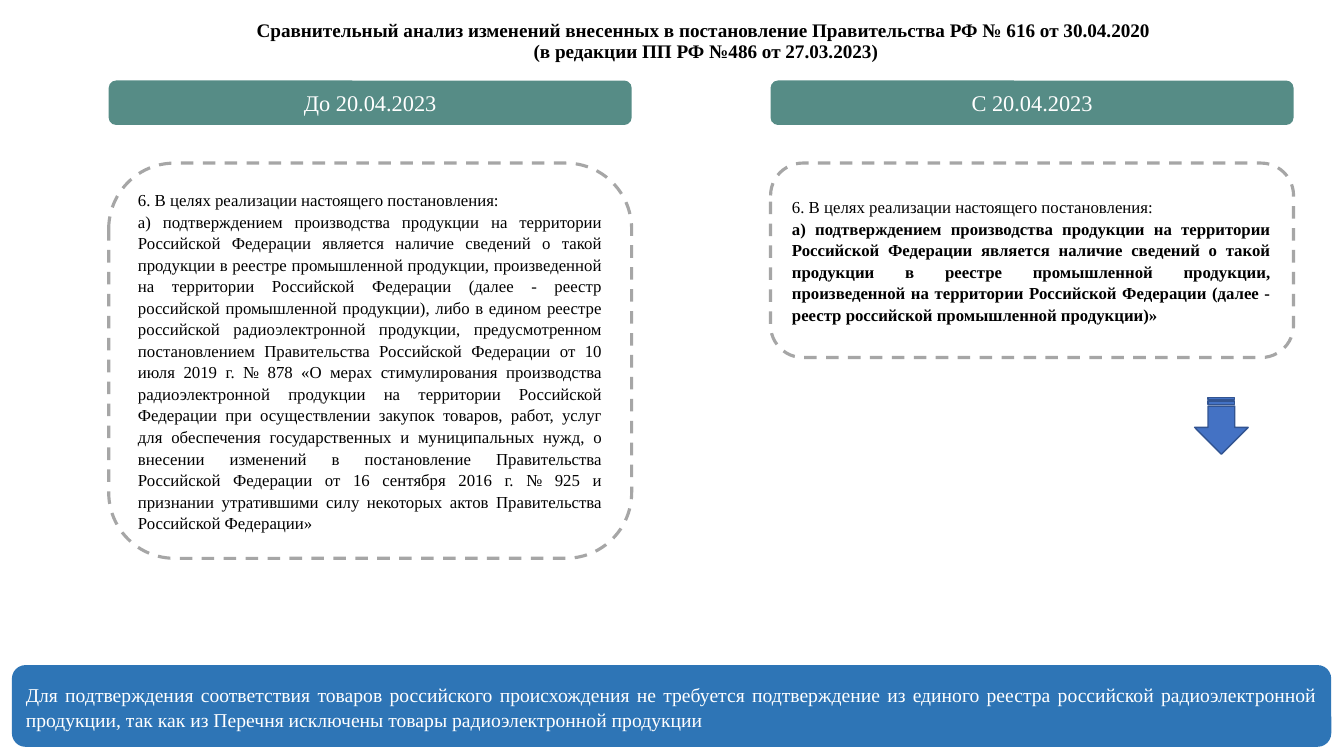
import dataclasses

import pptx
import pptx.dml.color
import pptx.enum.dml
import pptx.enum.shapes
import pptx.enum.text
import pptx.util

Cm = pptx.util.Cm
Pt = pptx.util.Pt
Align = pptx.enum.text.PP_ALIGN
Anchor = pptx.enum.text.MSO_ANCHOR
Preset = pptx.enum.shapes.MSO_SHAPE

FONT = "Times New Roman"
BLACK, WHITE = "000000", "FFFFFF"
GREEN, GREY = "568C86", "A6A6A6"
BLUE, ARROW_FILL, ARROW_LINE = "2E75B6", "4472C4", "325491"


@dataclasses.dataclass(frozen=True)
class Area:
    left: float
    top: float
    width: float
    height: float

    def lengths(self) -> tuple:
        return Cm(self.left), Cm(self.top), Cm(self.width), Cm(self.height)


@dataclasses.dataclass(frozen=True)
class Column:
    left: float
    heading: str
    panel_height: float


COLUMN_WIDTH = 13.18
INTRO = "6. В целях реализации настоящего постановления:"
CLAUSE = (
    "а) подтверждением производства продукции на территории Российской Федерации "
    "является наличие сведений о такой продукции в реестре промышленной продукции, "
    "произведенной на территории Российской Федерации (далее - реестр российской "
    "промышленной продукции)"
)
OLD_CLAUSE = CLAUSE + (
    ", либо в едином реестре российской радиоэлектронной продукции, предусмотренном "
    "постановлением Правительства Российской Федерации от 10 июля 2019 г. № 878 "
    "«О мерах стимулирования производства радиоэлектронной продукции на территории "
    "Российской Федерации при осуществлении закупок товаров, работ, услуг для "
    "обеспечения государственных и муниципальных нужд, о внесении изменений в "
    "постановление Правительства Российской Федерации от 16 сентября 2016 г. № 925 и "
    "признании утратившими силу некоторых актов Правительства Российской Федерации»"
)
NEW_CLAUSE = CLAUSE + "»"
CONCLUSION = (
    "Для подтверждения соответствия товаров российского происхождения не требуется "
    "подтверждение из единого реестра российской радиоэлектронной продукции, так как "
    "из Перечня исключены товары радиоэлектронной продукции"
)
TITLE = (
    "Сравнительный анализ изменений внесенных в постановление Правительства РФ "
    "№ 616 от 30.04.2020 ",
    "(в редакции ПП РФ №486 от 27.03.2023)",
)
COLUMNS = (
    Column(2.74, "До 20.04.2023", 9.96),
    Column(19.42, "С 20.04.2023", 4.9),
)


def colour(value: str) -> pptx.dml.color.RGBColor:
    return pptx.dml.color.RGBColor.from_string(value)


def write(box, *texts: str, size: float, ink: str = BLACK, align=Align.JUSTIFY,
          anchor=Anchor.MIDDLE, spacing: float = 1.07, bold: tuple = ()) -> None:
    frame = box.text_frame
    frame.word_wrap = True
    frame.auto_size = pptx.enum.text.MSO_AUTO_SIZE.NONE
    frame.vertical_anchor = anchor
    for index, text in enumerate(texts):
        para = frame.add_paragraph() if index else frame.paragraphs[0]
        para.alignment = align
        para.line_spacing = spacing
        para.space_before = para.space_after = Pt(0)
        span = para.add_run()
        span.text = text
        span.font.name = FONT
        span.font.size = Pt(size)
        span.font.bold = index in bold
        span.font.color.rgb = colour(ink)


def add_box(page, area: Area, preset=Preset.ROUNDED_RECTANGLE, fill: str = "",
            line: str = "", weight: float = 1, dashed: bool = False):
    box = page.shapes.add_shape(preset, *area.lengths())
    box.shadow.inherit = False
    if fill:
        box.fill.solid()
        box.fill.fore_color.rgb = colour(fill)
    else:
        box.fill.background()
    if line:
        box.line.color.rgb = colour(line)
        box.line.width = Pt(weight)
    else:
        box.line.fill.background()
    if dashed:
        box.line.dash_style = pptx.enum.dml.MSO_LINE.DASH
    return box


def add_title(page) -> None:
    title = page.shapes.title
    title.left, title.top, title.width, title.height = Area(1.7, 0.13, 32.18, 1.57).lengths()
    write(title, *TITLE, size=13.7, align=Align.CENTER, anchor=Anchor.BOTTOM,
          spacing=0.9, bold=(0, 1))


def add_column(page, column: Column):
    heading = add_box(page, Area(column.left, 2.03, COLUMN_WIDTH, 1.12), fill=GREEN)
    write(heading, column.heading, size=16, ink=WHITE, align=Align.CENTER, spacing=1.0)
    return add_box(page, Area(column.left, 4.11, COLUMN_WIDTH, column.panel_height),
                   line=GREY, weight=2.25, dashed=True)


def main() -> None:
    deck = pptx.Presentation()
    deck.slide_width, deck.slide_height = Cm(33.87), Cm(19.05)
    page = deck.slides.add_slide(deck.slide_layouts[5])
    add_title(page)

    old_panel, _ = [add_column(page, column) for column in COLUMNS]
    write(old_panel, INTRO, OLD_CLAUSE, size=12)
    new_text = page.shapes.add_textbox(*Area(19.71, 4.8, 12.57, 3.56).lengths())
    write(new_text, INTRO, NEW_CLAUSE, size=12, anchor=Anchor.TOP, bold=(1,))

    arrow = add_box(page, Area(30.07, 10.06, 1.42, 1.35), Preset.STRIPED_RIGHT_ARROW,
                    fill=ARROW_FILL, line=ARROW_LINE)
    arrow.rotation = 90
    conclusion = add_box(page, Area(0.3, 16.76, 33.25, 2.06), fill=BLUE)
    write(conclusion, CONCLUSION, size=14, ink=WHITE)
    deck.save("out.pptx")


if __name__ == "__main__":
    main()
